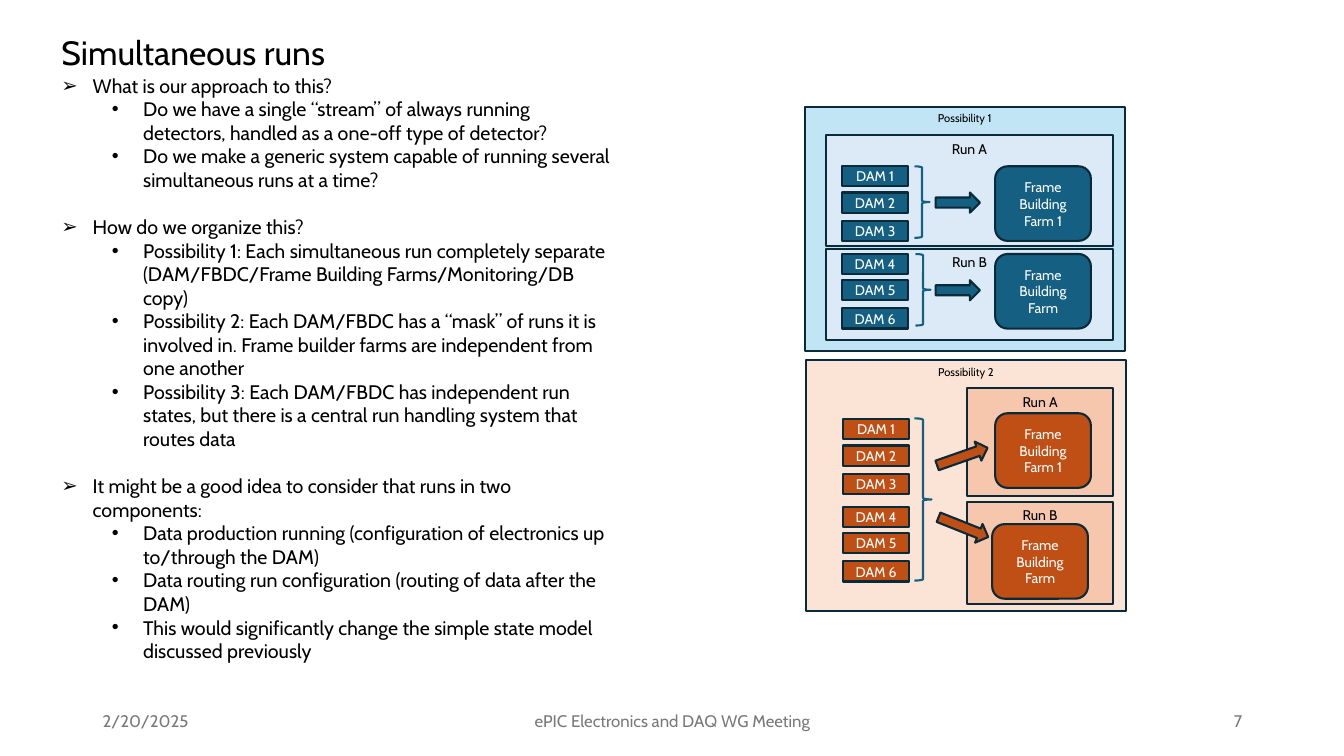
from pptx import Presentation
from pptx.dml.color import RGBColor
from pptx.enum.shapes import MSO_SHAPE as Shape
from pptx.enum.text import MSO_ANCHOR as Anchor, MSO_AUTO_SIZE as AutoSize, PP_ALIGN as Align
from pptx.util import Inches, Pt
from lxml.etree import SubElement

COLORS = {
    "black": "000000", "white": "FFFFFF", "grey": "797979", "outline": "092A39",
    "sky": "C1E5F5", "ice": "DCEAF7", "teal": "156082",
    "cream": "FBE3D6", "peach": "F6C6AD", "rust": "C04F15",
}
DRAWING = "{http://schemas.openxmlformats.org/drawingml/2006/main}"


def write(box, text, size, color, align=Align.CENTER, anchor=Anchor.MIDDLE):
    frame = box.text_frame
    for name, value in {"word_wrap": True, "auto_size": AutoSize.NONE,
                        "vertical_anchor": anchor, "text": text}.items():
        setattr(frame, name, value)
    for para in frame.paragraphs:
        para.alignment = align
        para.space_before = Pt(0)
        for name, value in {"name": "Cabin", "size": Pt(size)}.items():
            setattr(para.font, name, value)
        para.font.color.rgb = RGBColor.from_string(COLORS[color])


def draw(kind, place, fill=None, line="outline", text="", size=10,
         color="white", anchor=Anchor.MIDDLE):
    shape = page.shapes.add_shape(kind, *map(Inches, place))
    shape.shadow.inherit = False
    if fill:
        shape.fill.solid()
        shape.fill.fore_color.rgb = RGBColor.from_string(COLORS[fill])
    else:
        shape.fill.background()
    shape.line.color.rgb = RGBColor.from_string(COLORS[line])
    shape.line.width = Pt(1.5)
    if text:
        write(shape, text, size, color, anchor=anchor)
    return shape


deck = Presentation()
deck.slide_width, deck.slide_height = Inches(13.33), Inches(7.5)
page = deck.slides.add_slide(deck.slide_layouts[1])

# Title and outline
title, body = page.shapes.title, page.placeholders[1]
for box, top, height in ((title, 0.27, 0.5), (body, 0.68, 5.99)):
    box.left, box.top, box.width, box.height = map(Inches, (0.51, top, 5.71, height))
write(title, "Simultaneous runs", 24, "black", Align.LEFT, Anchor.TOP)

outline = [
    ("What is our approach to this?", [
        "Do we have a single “stream” of always running detectors, handled as a one-off type of detector?",
        "Do we make a generic system capable of running several simultaneous runs at a time?"]),
    ("How do we organize this?", [
        "Possibility 1: Each simultaneous run completely separate "
        "(DAM/FBDC/Frame Building Farms/Monitoring/DB copy)",
        "Possibility 2: Each DAM/FBDC has a “mask” of runs it is involved in. "
        "Frame builder farms are independent from one another",
        "Possibility 3: Each DAM/FBDC has independent run states, "
        "but there is a central run handling system that routes data"]),
    ("It might be a good idea to consider that runs in two components:", [
        "Data production running (configuration of electronics up to/through the DAM)",
        "Data routing run configuration (routing of data after the DAM)",
        "This would significantly change the simple state model discussed previously"]),
]
lines = [(level, text) for topic, points in outline
         for level, text in [(0, topic)] + [(1, point) for point in points]]
body.text_frame.text = "\n".join(text for level, text in lines)
for para, (level, text) in zip(body.text_frame.paragraphs, lines):
    para.level = level
    settings = para._p.get_or_add_pPr()
    settings.set("marL", str(Inches(0.81 if level else 0.31)))
    settings.set("indent", str(Inches(-0.31)))
    SubElement(settings, DRAWING + "buChar", char="•" if level else "➢")
    para.alignment = Align.LEFT
    first_topic = text == outline[0][0]
    para.space_before = Pt(0 if level or first_topic else 17)
    for name, value in {"name": "Cabin", "size": Pt(14)}.items():
        setattr(para.font, name, value)
    para.font.color.rgb = RGBColor.from_string(COLORS["black"])
body.text_frame.word_wrap = True
body.text_frame.auto_size = AutoSize.NONE

# Panels and run frames
for place, fill, text, size in (
    ((7.98, 1.06, 3.18, 2.42), "sky", "Possibility 1", 8),
    ((8.19, 2.47, 2.85, 0.9), "ice", "Run B", 10),
    ((8.19, 1.34, 2.85, 1.1), "ice", "Run A", 10),
    ((7.99, 3.57, 3.18, 2.49), "cream", "Possibility 2", 8),
    ((9.59, 4.98, 1.45, 1.01), "peach", "Run B", 10),
    ((9.59, 3.85, 1.45, 1.07), "peach", "Run A", 10),
):
    draw(Shape.RECTANGLE, place, fill, text=text, size=size, color="black", anchor=Anchor.TOP)

# DAM stacks: two groups of three in each panel
for left, top, fill in ((8.35, 1.65, "teal"), (8.36, 4.16, "rust")):
    for number in range(6):
        group, row = divmod(number, 3)
        y = top + 0.87 * group + (0, 0.26, 0.54)[row]
        draw(Shape.RECTANGLE, (left, y, 0.66, 0.2), fill, text=f"DAM {number + 1}")

# Arrows into the frame building farms
for place, angle, fill in (
    ((9.28, 1.91, 0.44, 0.2), 0, "teal"),
    ((9.28, 2.78, 0.44, 0.2), 0, "teal"),
    ((9.28, 4.43, 0.53, 0.2), 340.7, "rust"),
    ((9.29, 5.13, 0.53, 0.2), 21.7, "rust"),
):
    draw(Shape.RIGHT_ARROW, place, fill).rotation = angle

for left, top, fill, text in (
    (9.87, 1.65, "teal", "Frame Building Farm 1"),
    (9.87, 2.52, "teal", "Frame Building Farm"),
    (9.87, 4.1, "rust", "Frame Building Farm 1"),
    (9.84, 5.2, "rust", "Frame Building Farm"),
):
    draw(Shape.ROUNDED_RECTANGLE, (left, top, 0.95, 0.74), fill, text=text)

# Braces
for place in ((9.07, 1.65, 0.15, 0.71), (9.08, 2.52, 0.15, 0.71), (9.07, 4.15, 0.17, 1.61)):
    draw(Shape.RIGHT_BRACE, place, line="teal")

# Footer
for left, width, text, align in (
    (0.92, 3, "2/20/2025", Align.LEFT),
    (4.42, 4.5, "ePIC Electronics and DAQ WG Meeting", Align.CENTER),
    (9.42, 3, "7", Align.RIGHT),
):
    box = page.shapes.add_textbox(*map(Inches, (left, 6.95, width, 0.4)))
    write(box, text, 12, "grey", align)

deck.save("out.pptx")
